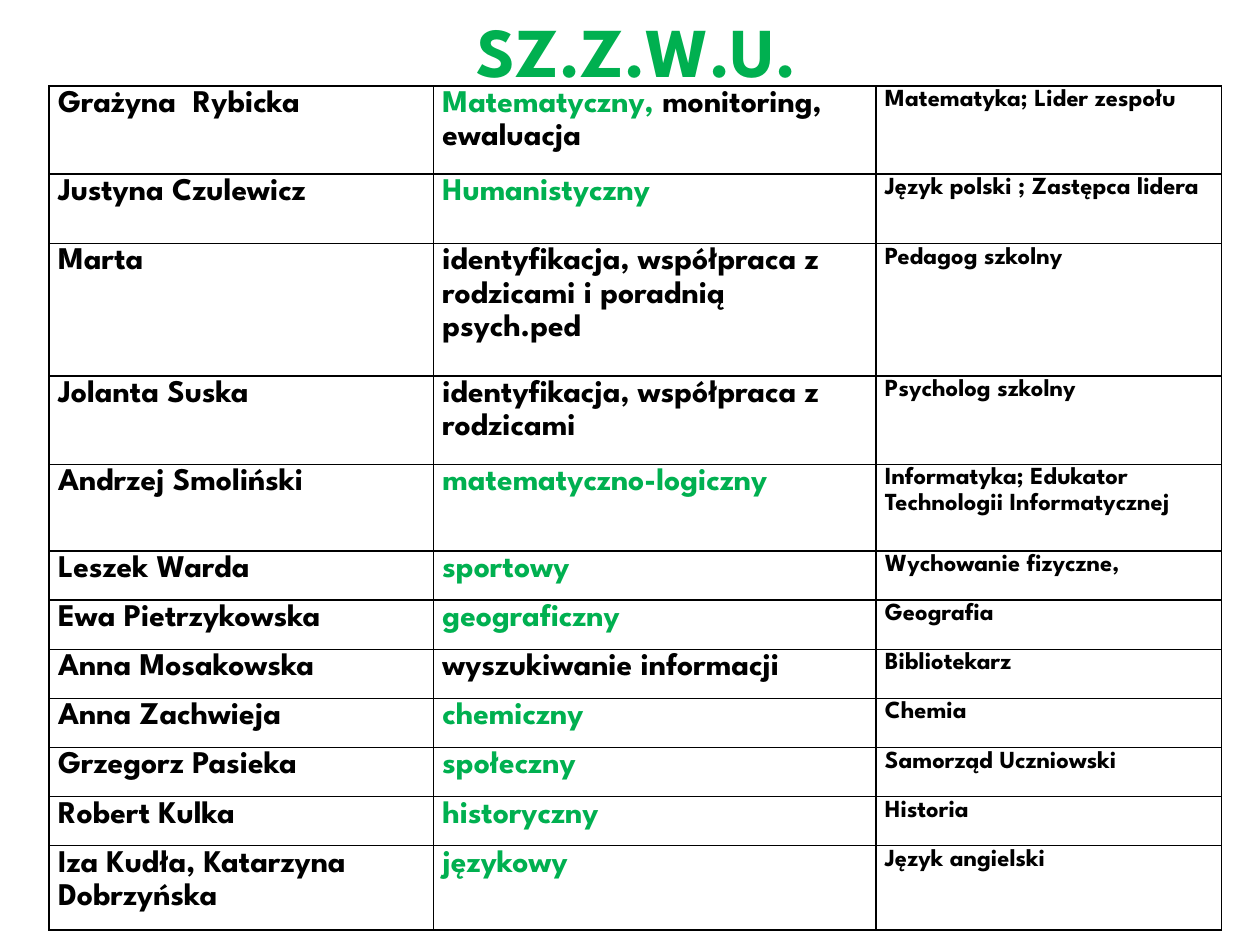
from lxml.etree import SubElement
from pptx import Presentation
from pptx.dml.color import RGBColor
from pptx.enum.text import MSO_ANCHOR as Anchor, PP_ALIGN as Align
from pptx.oxml.ns import qn
from pptx.util import Cm, Pt

COLORS = {"green": "00B050", "black": "000000", "white": "FFFFFF"}

COL_WIDTHS = [7.75, 8.92, 6.96]
ROW_HEIGHTS = [1.78, 1.4, 2.67, 1.78, 1.75] + [0.99] * 6 + [1.7]
COL_SIZES = [18, 18, 14]

# Name, area in green, area in black, role
TEAM = [
    ("Grażyna  Rybicka", "Matematyczny, ", "monitoring, ewaluacja",
     "Matematyka; Lider zespołu"),
    ("Justyna Czulewicz", "Humanistyczny", "", "Język polski ; Zastępca lidera"),
    ("Marta", "", "identyfikacja, współpraca z rodzicami i poradnią psych.ped",
     "Pedagog szkolny"),
    ("Jolanta Suska", "", "identyfikacja, współpraca z rodzicami", "Psycholog szkolny"),
    ("Andrzej Smoliński", "matematyczno-logiczny", "",
     "Informatyka; Edukator Technologii Informatycznej"),
    ("Leszek Warda", "sportowy", "", "Wychowanie fizyczne,"),
    ("Ewa Pietrzykowska", "geograficzny", "", "Geografia"),
    ("Anna Mosakowska", "", "wyszukiwanie informacji", "Bibliotekarz"),
    ("Anna Zachwieja", "chemiczny", "", "Chemia"),
    ("Grzegorz Pasieka", "społeczny", "", "Samorząd Uczniowski"),
    ("Robert Kulka", "historyczny", "", "Historia"),
    ("Iza Kudła, Katarzyna Dobrzyńska", "językowy", "", "Język angielski"),
]


def add_text(p, text, size=18, color="black", bold=True, font="League Spartan"):
    r = p.add_run()
    r.text = text
    r.font.name, r.font.size, r.font.bold = font, Pt(size), bold
    r.font.color.rgb = RGBColor.from_string(COLORS[color])


class SlideBuilder:
    def __init__(self, s, border_width=1, line_spacing=1.15, space_after=10):
        self.s = s
        self.border_width = border_width
        self.line_spacing = line_spacing
        self.space_after = space_after

    def title(self, text, left, top, width, height):
        sp = self.s.shapes.title
        sp.left, sp.top, sp.width, sp.height = map(Cm, (left, top, width, height))
        tf = sp.text_frame
        tf.word_wrap = True
        tf.vertical_anchor = Anchor.MIDDLE
        p = tf.paragraphs[0]
        p.alignment = Align.CENTER
        add_text(p, text, size=40, color="green")

    def borders(self, cell):
        tc_pr = cell._tc.get_or_add_tcPr()
        for i, side in enumerate(("lnL", "lnR", "lnT", "lnB")):
            ln = tc_pr.makeelement(qn(f"a:{side}"), w=str(Pt(self.border_width)))
            tc_pr.insert(i, ln)
            fill = SubElement(ln, qn("a:solidFill"))
            SubElement(fill, qn("a:srgbClr"), val=COLORS["black"])

    def cell(self, cell, runs, size):
        cell.fill.solid()
        cell.fill.fore_color.rgb = RGBColor.from_string(COLORS["white"])
        cell.margin_left = cell.margin_right = Cm(0.18)
        cell.margin_top = cell.margin_bottom = 0
        self.borders(cell)
        p = cell.text_frame.paragraphs[0]
        p.line_spacing = self.line_spacing
        p.space_after = Pt(self.space_after)
        for text, color in runs:
            if text:
                add_text(p, text, size=size, color=color)

    def table(self, rows, left, top):
        table = self.s.shapes.add_table(
            len(rows), len(COL_WIDTHS), Cm(left), Cm(top),
            Cm(sum(COL_WIDTHS)), Cm(sum(ROW_HEIGHTS))).table
        table.first_row = table.horz_banding = False
        for col, width in zip(table.columns, COL_WIDTHS):
            col.width = Cm(width)
        for row, height, cells in zip(table.rows, ROW_HEIGHTS, rows):
            row.height = Cm(height)
            for cell, runs, size in zip(row.cells, cells, COL_SIZES):
                self.cell(cell, runs, size)


def main():
    prs = Presentation()
    prs.slide_width, prs.slide_height = Cm(25.4), Cm(19.05)
    builder = SlideBuilder(prs.slides.add_slide(prs.slide_layouts[5]))

    # Heading
    builder.title("SZ.Z.W.U.", 1.4, 0, 22.86, 1.98)

    # Team members, their areas and roles
    rows = [([(name, "black")], [(green, "green"), (black, "black")], [(role, "black")])
            for name, green, black, role in TEAM]
    builder.table(rows, 0.99, 1.73)

    prs.save("out.pptx")


if __name__ == "__main__":
    main()
